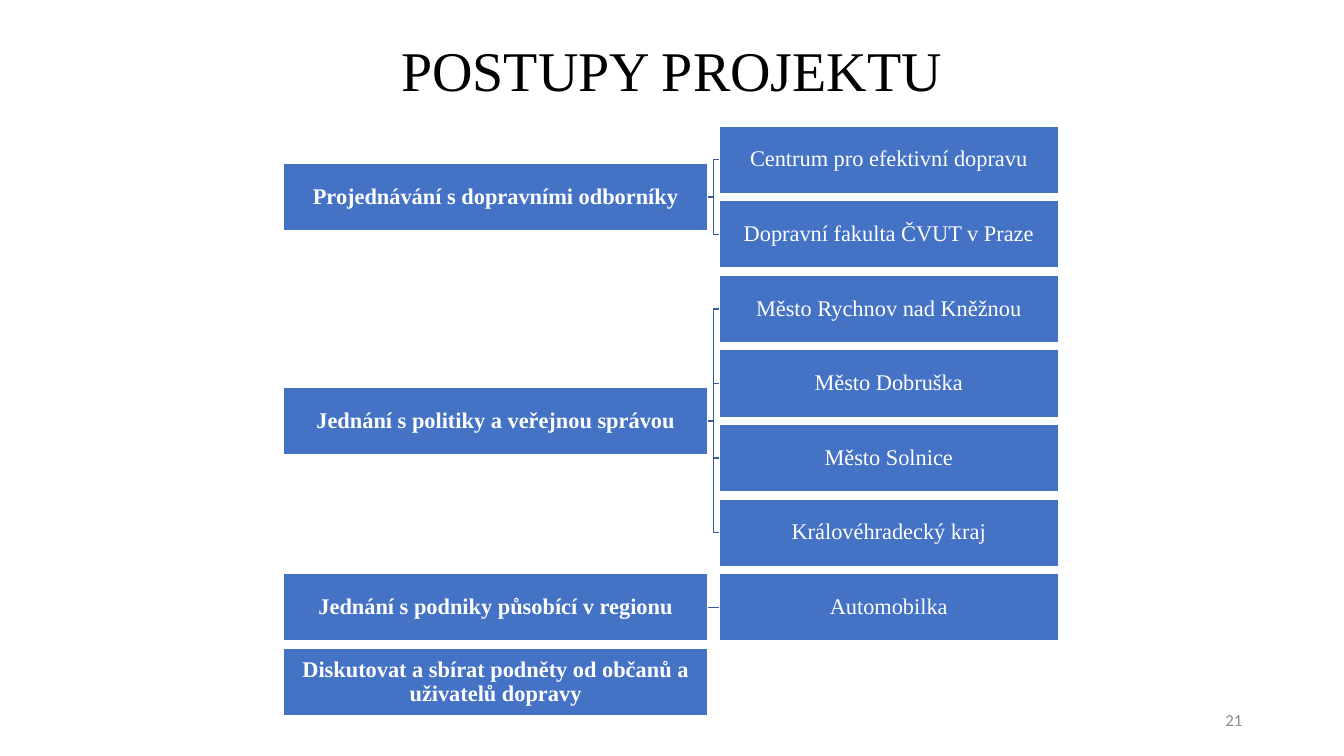
"""Build the slide of project procedures with their partner organisations."""
from dataclasses import dataclass

from lxml.etree import SubElement
from pptx import Presentation
from pptx.dml.color import RGBColor
from pptx.enum.shapes import MSO_CONNECTOR, MSO_SHAPE
from pptx.enum.text import MSO_ANCHOR, PP_ALIGN
from pptx.oxml.ns import qn
from pptx.util import Inches, Pt


@dataclass(frozen=True)
class Theme:
    box: RGBColor = RGBColor(0x44, 0x72, 0xC4)
    link: RGBColor = RGBColor(0x36, 0x5B, 0x9D)
    light: RGBColor = RGBColor(0xFF, 0xFF, 0xFF)
    dark: RGBColor = RGBColor(0, 0, 0)
    grey: RGBColor = RGBColor(0x8C, 0x8C, 0x8C)
    serif: str = "Times New Roman"
    sans: str = "Calibri"
    title_size: Pt = Pt(40)
    box_size: Pt = Pt(16)
    number_size: Pt = Pt(12)


theme = Theme()
TOP, PITCH, BOX_HEIGHT = 1.25, 0.74, 0.67
PROCEDURE_LEFT, PROCEDURE_WIDTH = 2.81, 4.21
PARTNER_LEFT, PARTNER_WIDTH = 7.13, 3.37

procedures = [
    ("Projednávání s dopravními odborníky",
     ["Centrum pro efektivní dopravu", "Dopravní fakulta ČVUT v Praze"]),
    ("Jednání s politiky a veřejnou správou",
     ["Město Rychnov nad Kněžnou", "Město Dobruška", "Město Solnice",
      "Královéhradecký kraj"]),
    ("Jednání s podniky působící v regionu", ["Automobilka"]),
    ("Diskutovat a sbírat podněty od občanů a uživatelů dopravy", []),
]


def write(frame, text, font_name, size, color, align, bold=False):
    frame.text = text
    frame.word_wrap = True
    frame.vertical_anchor = MSO_ANCHOR.MIDDLE
    paragraph = frame.paragraphs[0]
    paragraph.alignment = align
    paragraph.line_spacing = 0.9
    font = paragraph.runs[0].font
    font.name, font.size, font.bold = font_name, size, bold
    font.color.rgb = color


def add_box(left, row, width, text, bold):
    box = slide.shapes.add_shape(
        MSO_SHAPE.RECTANGLE, Inches(left), Inches(TOP + row * PITCH),
        Inches(width), Inches(BOX_HEIGHT))
    box.shadow.inherit = False
    box.fill.solid()
    box.fill.fore_color.rgb = theme.box
    box.line.color.rgb = theme.light
    box.line.width = Pt(1)
    frame = box.text_frame
    frame.margin_left = frame.margin_right = Inches(0.01)
    frame.margin_top = frame.margin_bottom = Inches(0.01)
    write(frame, text, theme.serif, theme.box_size, theme.light,
          PP_ALIGN.CENTER, bold)
    return box


presentation = Presentation()
presentation.slide_width = Inches(13.33)
presentation.slide_height = Inches(7.5)
slide = presentation.slides.add_slide(presentation.slide_layouts[5])

title = slide.shapes.title
title.left, title.top = Inches(0.91), Inches(0)
title.width, title.height = Inches(11.5), Inches(1.45)
write(title.text_frame, "POSTUPY PROJEKTU", theme.serif, theme.title_size,
      theme.dark, PP_ALIGN.CENTER)

first_row = 0
for procedure, partners in procedures:
    row_count = max(len(partners), 1)
    middle_row = first_row + (row_count - 1) / 2
    procedure_box = add_box(PROCEDURE_LEFT, middle_row, PROCEDURE_WIDTH,
                            procedure, True)
    for row, partner in enumerate(partners, first_row):
        partner_box = add_box(PARTNER_LEFT, row, PARTNER_WIDTH, partner, False)
        bend = MSO_CONNECTOR.STRAIGHT if row == middle_row else MSO_CONNECTOR.ELBOW
        link = slide.shapes.add_connector(bend, 0, 0, 0, 0)
        link.begin_connect(procedure_box, 3)
        link.end_connect(partner_box, 1)
        link.line.color.rgb = theme.link
        link.line.width = Pt(1)
        SubElement(link._element.spPr, qn("a:effectLst"))
    first_row += row_count

page_number = slide.shapes.add_textbox(
    Inches(9.42), Inches(6.95), Inches(3), Inches(0.4))
write(page_number.text_frame, "21", theme.sans, theme.number_size, theme.grey,
      PP_ALIGN.RIGHT)

presentation.save("out.pptx")
